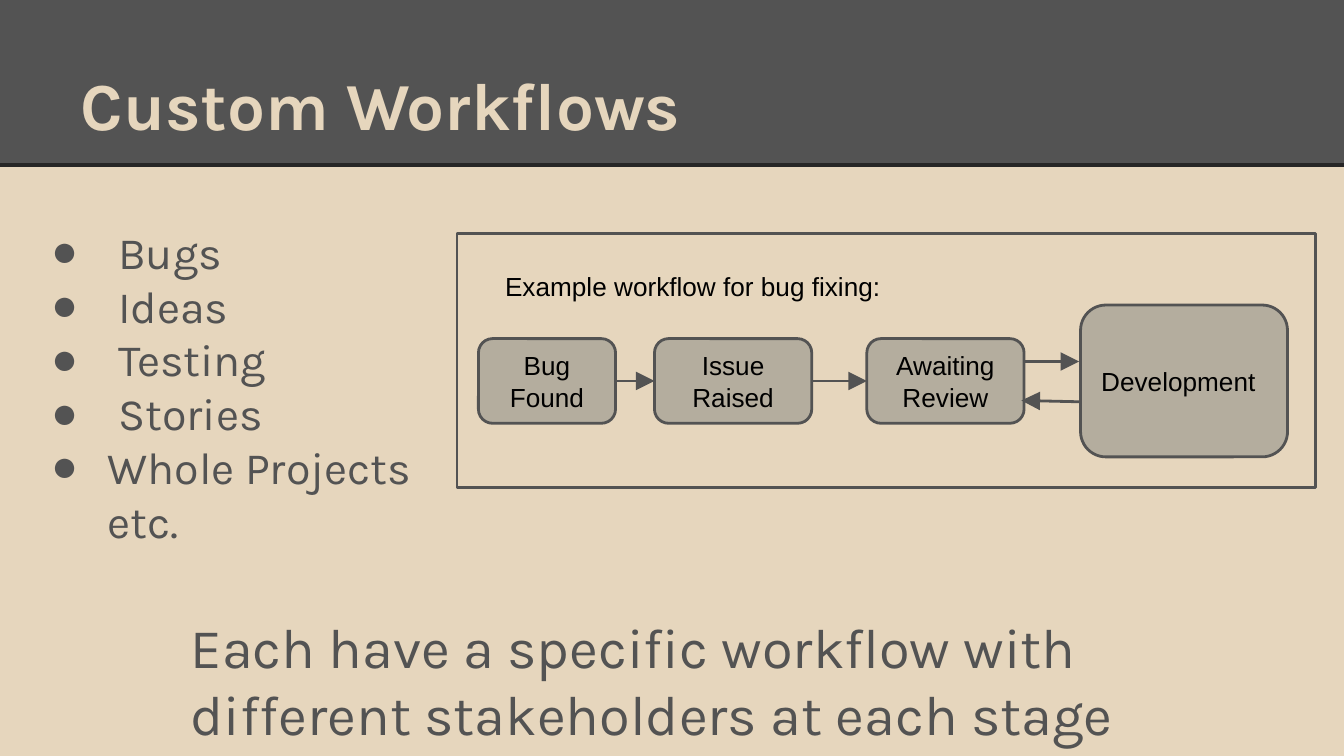
from dataclasses import dataclass

from lxml.etree import SubElement
from pptx import Presentation
from pptx.dml.color import RGBColor
from pptx.enum.shapes import MSO_CONNECTOR, MSO_SHAPE
from pptx.enum.text import MSO_ANCHOR, MSO_AUTO_SIZE, PP_ALIGN
from pptx.oxml.ns import qn
from pptx.util import Inches, Pt


@dataclass(frozen=True)
class Theme:
    sand: RGBColor = RGBColor(0xE6, 0xD6, 0xBD)
    gray: RGBColor = RGBColor(0x53, 0x53, 0x53)
    rule: RGBColor = RGBColor(0x26, 0x26, 0x26)
    stage: RGBColor = RGBColor(0xB4, 0xAD, 0x9E)
    black: RGBColor = RGBColor(0, 0, 0)
    heading_font: str = "Karla"
    label_font: str = "Arial"
    title_size: int = 36
    list_size: int = 24
    note_size: int = 30
    label_size: int = 14
    line_width: float = 1.5
    rule_width: float = 2.25


@dataclass(frozen=True)
class Box:
    left: float
    top: float
    width: float
    height: float

    def emu(self) -> tuple:
        return tuple(Inches(v) for v in (self.left, self.top, self.width, self.height))


@dataclass(frozen=True)
class Stage:
    label: str
    box: Box
    align: PP_ALIGN = PP_ALIGN.CENTER


THEME = Theme()
BULLETS = [" Bugs", " Ideas", " Testing", " Stories", "Whole Projects etc."]
STAGES = [
    Stage("Bug Found", Box(3.56, 2.52, 1.02, 0.63)),
    Stage("Issue Raised", Box(4.87, 2.52, 1.17, 0.63)),
    Stage("Awaiting Review", Box(6.45, 2.52, 1.17, 0.63)),
    Stage("Development", Box(8.04, 2.27, 1.54, 1.13), PP_ALIGN.LEFT),
]


def setup_frame(tf, anchor=MSO_ANCHOR.TOP) -> None:
    tf.word_wrap = True
    tf.auto_size = MSO_AUTO_SIZE.NONE
    tf.vertical_anchor = anchor
    tf.margin_left = tf.margin_right = tf.margin_top = tf.margin_bottom = Inches(0.1)


def add_text(p, text: str, font: str, size: int, color: RGBColor,
             bold: bool = False, align=PP_ALIGN.LEFT) -> None:
    p.alignment = align
    p.space_before = Pt(0)
    r = p.add_run()
    r.text = text
    r.font.name = font
    r.font.size = Pt(size)
    r.font.bold = bold
    r.font.color.rgb = color


def add_bullet(p) -> None:
    pPr = p._p.get_or_add_pPr()
    pPr.set("marL", str(Inches(0.5)))
    pPr.set("indent", str(Inches(-0.42)))
    color = SubElement(pPr, qn("a:buClr"))
    SubElement(color, qn("a:srgbClr"), val=str(THEME.gray))
    SubElement(pPr, qn("a:buChar"), char="●")


def place(sp, box: Box) -> None:
    sp.left, sp.top, sp.width, sp.height = box.emu()


def add_box(s, kind, box: Box, fill=None, line=None):
    sp = s.shapes.add_shape(kind, *box.emu())
    sp.shadow.inherit = False
    if fill is None:
        sp.fill.background()
    else:
        sp.fill.solid()
        sp.fill.fore_color.rgb = fill
    if line is None:
        sp.line.fill.background()
    else:
        sp.line.color.rgb = line
        sp.line.width = Pt(THEME.line_width)
    return sp


def add_stage(s, stage: Stage):
    sp = add_box(s, MSO_SHAPE.ROUNDED_RECTANGLE, stage.box, THEME.stage, THEME.gray)
    setup_frame(sp.text_frame, MSO_ANCHOR.MIDDLE)
    add_text(sp.text_frame.paragraphs[0], stage.label, THEME.label_font,
             THEME.label_size, THEME.black, align=stage.align)
    return sp


def add_line(s, start: tuple, end: tuple, color: RGBColor, width: float, arrow: bool = True):
    cn = s.shapes.add_connector(MSO_CONNECTOR.STRAIGHT, *(Inches(v) for v in start + end))
    cn.line.color.rgb = color
    cn.line.width = Pt(width)
    if arrow:
        SubElement(cn.line._get_or_add_ln(), qn("a:tailEnd"), type="triangle", w="lg", len="lg")
    SubElement(cn._element.spPr, qn("a:effectLst"))
    return cn


def add_text_box(s, box: Box, text: str, font: str, size: int, color: RGBColor) -> None:
    tf = s.shapes.add_textbox(*box.emu()).text_frame
    setup_frame(tf)
    add_text(tf.paragraphs[0], text, font, size, color)


def main() -> None:
    prs = Presentation()
    # Widescreen, 16:9
    prs.slide_width = Inches(10)
    prs.slide_height = Inches(10 * 9 / 16)
    s = prs.slides.add_slide(prs.slide_layouts[1])
    s.background.fill.solid()
    s.background.fill.fore_color.rgb = THEME.sand

    # Header band, sent behind the title
    band = add_box(s, MSO_SHAPE.RECTANGLE, Box(0, 0, 10, 1.23), THEME.gray)
    s.shapes._spTree.insert(2, band._element)
    add_line(s, (0, 1.23), (10, 1.23), THEME.rule, THEME.rule_width, arrow=False)

    # Title
    title = s.shapes.title
    place(title, Box(0.5, 0.23, 9, 0.94))
    setup_frame(title.text_frame, MSO_ANCHOR.BOTTOM)
    add_text(title.text_frame.paragraphs[0], "Custom Workflows", THEME.heading_font,
             THEME.title_size, THEME.sand, bold=True)

    # Bullet list
    body = s.placeholders[1]
    place(body, Box(0.2, 1.57, 3.07, 2.48))
    tf = body.text_frame
    setup_frame(tf)
    for i, item in enumerate(BULLETS):
        p = tf.add_paragraph() if i else tf.paragraphs[0]
        add_text(p, item, THEME.heading_font, THEME.list_size, THEME.gray)
        add_bullet(p)

    # Workflow diagram
    add_box(s, MSO_SHAPE.RECTANGLE, Box(3.4, 1.74, 6.39, 1.89), line=THEME.gray)
    add_text_box(s, Box(3.66, 1.91, 3.24, 0.42), "Example workflow for bug fixing:",
                 THEME.label_font, THEME.label_size, THEME.black)
    found, issue, review, _ = [add_stage(s, stage) for stage in STAGES]
    for a, b in ((found, issue), (issue, review)):
        cn = add_line(s, (0, 0), (1, 0), THEME.gray, THEME.line_width)
        cn.begin_connect(a, 3)
        cn.end_connect(b, 1)
    # Review and development pass work both ways
    add_line(s, (7.61, 2.69), (8.03, 2.69), THEME.gray, THEME.line_width)
    add_line(s, (8.04, 2.99), (7.6, 2.98), THEME.gray, THEME.line_width)

    # Closing note
    add_text_box(s, Box(1.32, 4.46, 7.25, 1.32),
                 "Each have a specific workflow with different stakeholders at each stage",
                 THEME.heading_font, THEME.note_size, THEME.gray)

    prs.save("out.pptx")


if __name__ == "__main__":
    main()
